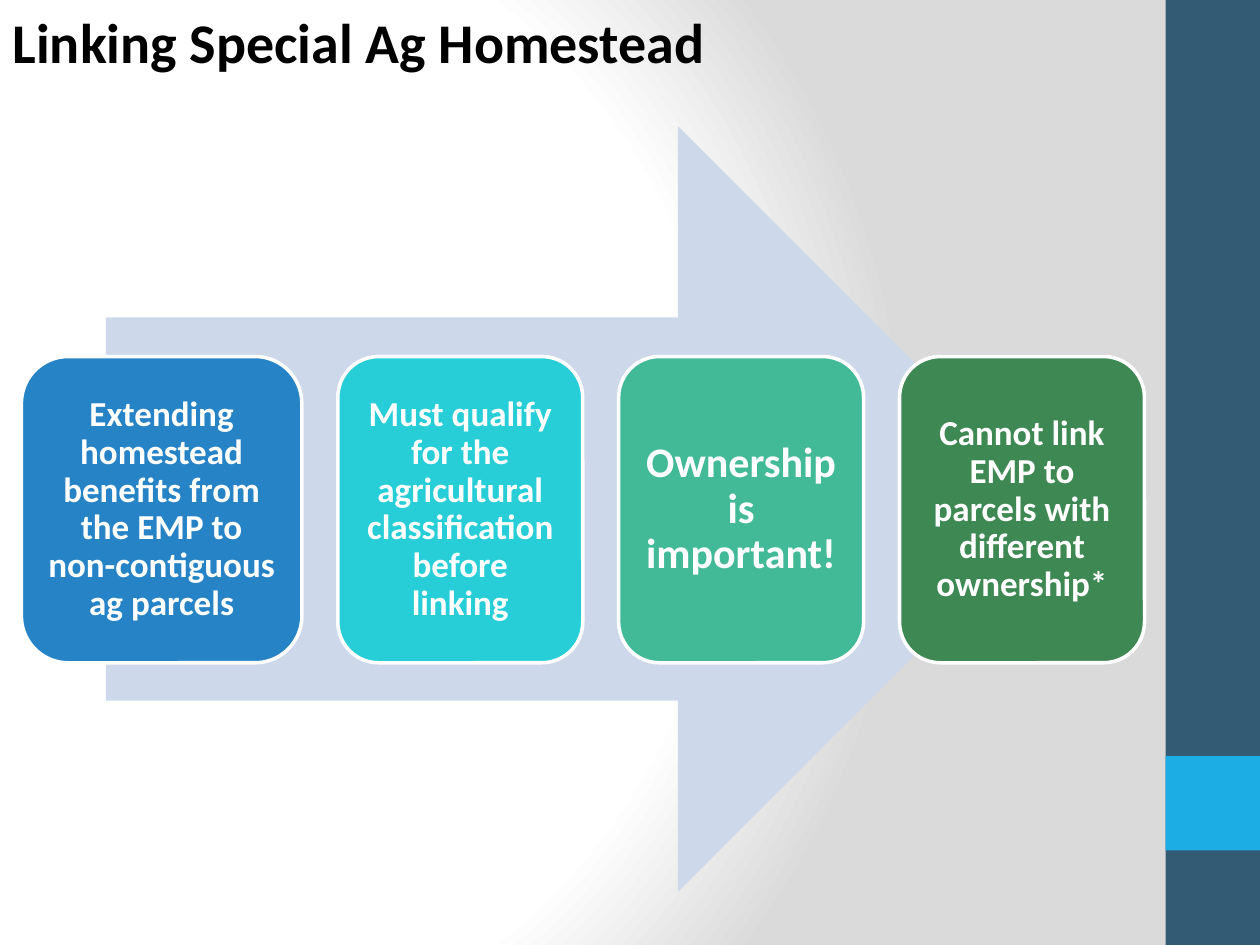
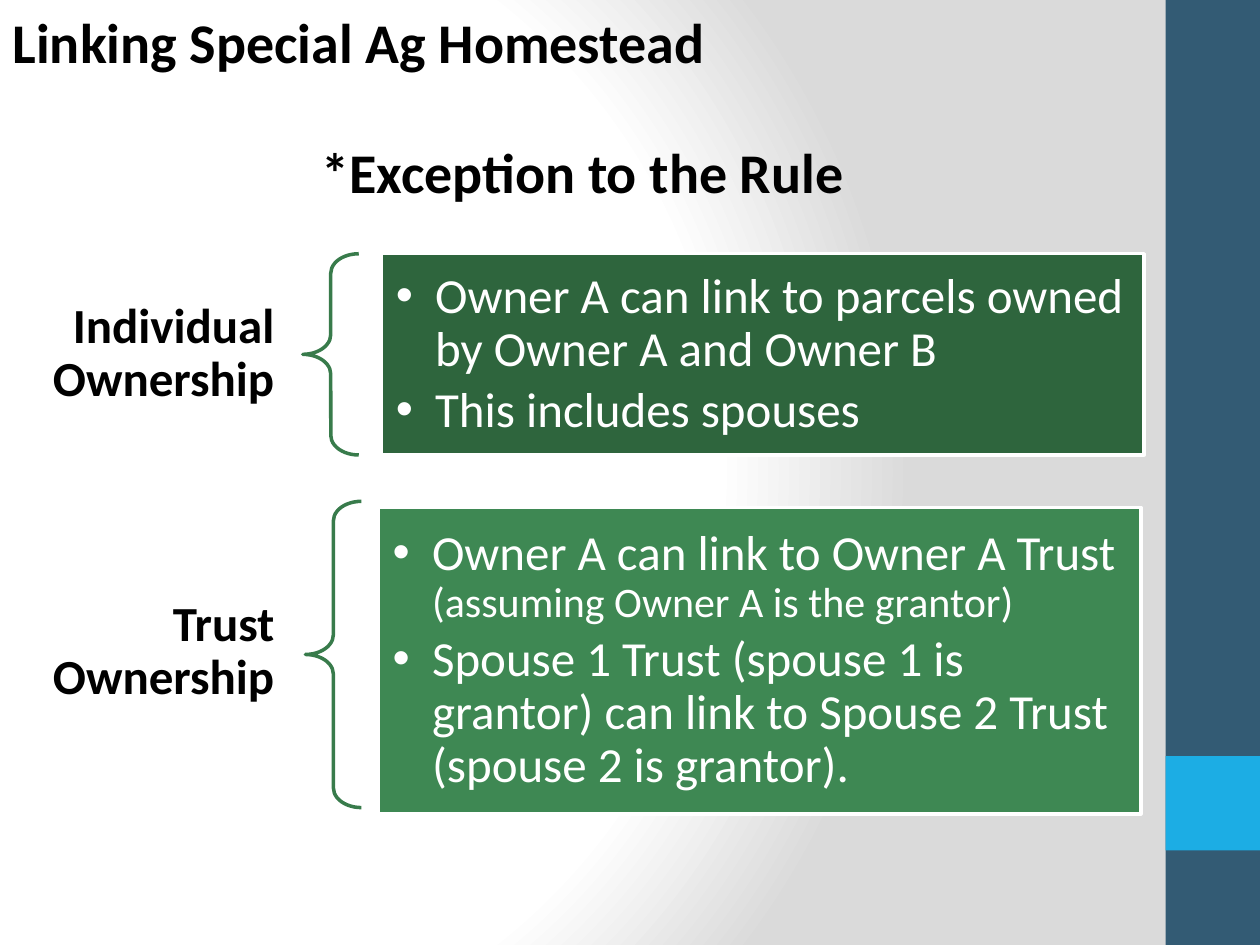
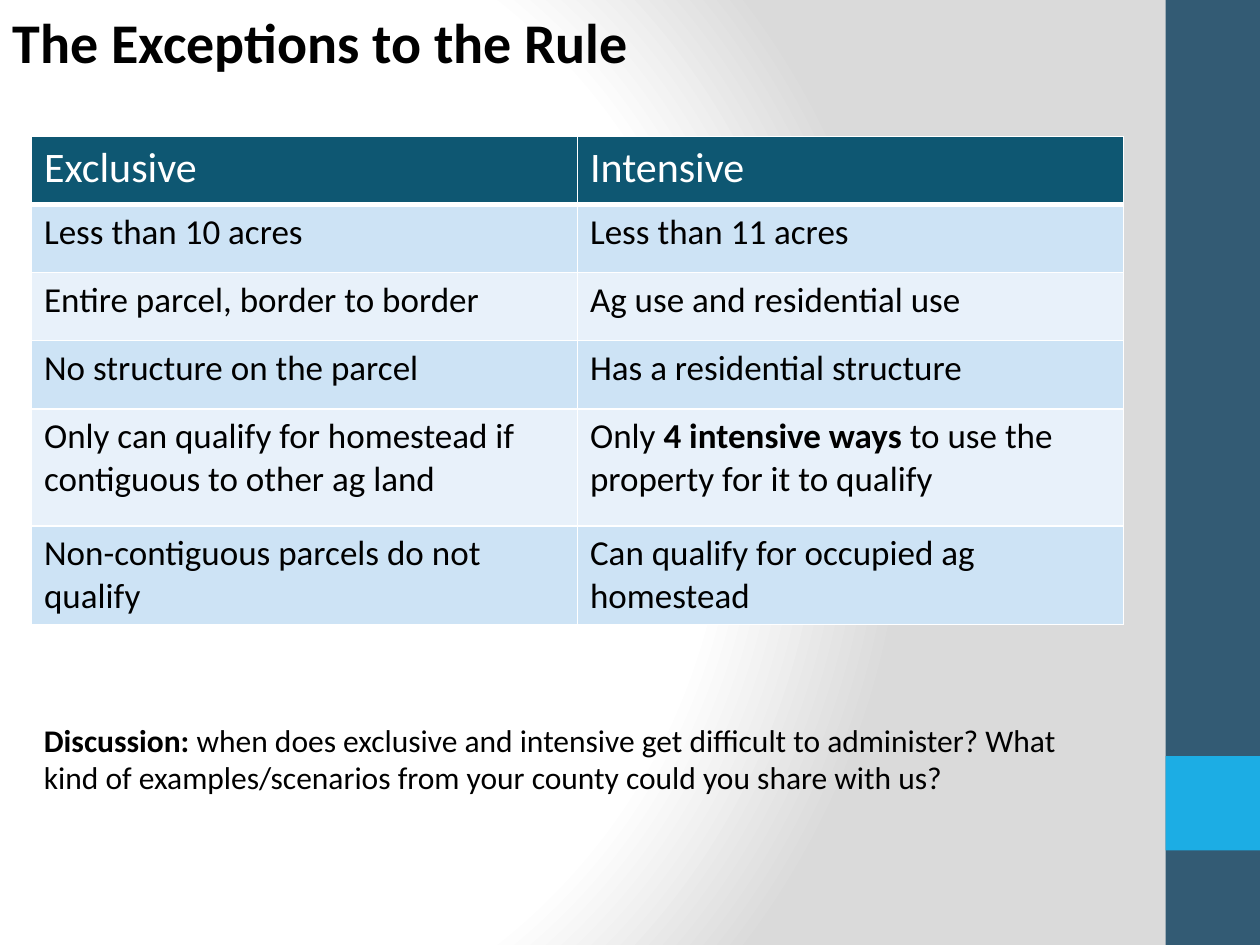
from dataclasses import dataclass
from typing import Any, NamedTuple

from pptx import Presentation
from pptx.dml.color import RGBColor
from pptx.enum.shapes import MSO_SHAPE
from pptx.enum.text import MSO_ANCHOR, MSO_AUTO_SIZE, PP_ALIGN
from pptx.oxml import parse_xml
from pptx.oxml.ns import nsdecls, qn
from pptx.util import Pt

RECT = MSO_SHAPE.RECTANGLE
ROUNDED = MSO_SHAPE.ROUNDED_RECTANGLE
ARROW = MSO_SHAPE.RIGHT_ARROW
BRACE = MSO_SHAPE.LEFT_BRACE
TOP = MSO_ANCHOR.TOP
MIDDLE = MSO_ANCHOR.MIDDLE
FIXED = MSO_AUTO_SIZE.NONE
LEFT = PP_ALIGN.LEFT
CENTER = PP_ALIGN.CENTER
RIGHT = PP_ALIGN.RIGHT
TWO_CONTENT = 3
TITLE_ONLY = 5


@dataclass(frozen=True)
class Theme:
    font: str = "Calibri"
    white: str = "FFFFFF"
    black: str = "000000"
    backdrop: str = "DADADA"
    side_band: str = "335B74"
    side_accent: str = "1CADE4"
    arrow: str = "CDD9EA"
    blue: str = "2683C6"
    cyan: str = "27CED7"
    teal: str = "42BA97"
    green: str = "3E8853"
    dark_green: str = "2E653D"
    brace: str = "387B4B"
    header: str = "0E5772"
    odd_row: str = "CDE3F5"
    even_row: str = "E8F1FA"
    title: int = 32
    list: int = 28
    large: int = 24
    normal: int = 20
    note: int = 18


THEME = Theme()


class Box(NamedTuple):
    left: float
    top: float
    width: float
    height: float

    def lengths(self) -> dict[str, int]:
        return {side: Pt(value) for side, value in self._asdict().items()}


class Span(NamedTuple):
    text: str
    size: int
    color: str = THEME.black
    bold: bool = False


class Band(NamedTuple):
    box: Box
    color: str


class Card(NamedTuple):
    text: str
    width: float
    color: str
    size: int = THEME.normal
    inset: float = 6


class Ownership(NamedTuple):
    label: str
    label_top: float
    brace: Box
    panel: Box
    color: str
    points: list[list[Span]]


TITLE_BOX = Box(0, 0.75, 551.5, 46)
BANDS = [
    Band(Box(666, 0, 54, 540), THEME.side_band),
    Band(Box(666, 432, 54, 54), THEME.side_accent),
]

ARROW_BOX = Box(60.5, 72, 545.75, 437.75)
CARD_LEFT, CARD_TOP, CARD_HEIGHT, CARD_GAP = 12.25, 203.75, 175, 20.5
CARDS = [
    Card("Extending homestead benefits from the EMP to non-contiguous ag parcels",
         160.25, THEME.blue),
    Card("Must qualify for the agricultural classification before linking",
         140, THEME.cyan),
    Card("Ownership is important!", 140, THEME.teal, THEME.large, 7.2),
    Card("Cannot link EMP to parcels with different ownership*", 140, THEME.green),
]


def point(text: str, size: int = THEME.list) -> Span:
    return Span(text, size, THEME.white)


OWNERSHIPS = [
    Ownership(
        "Individual Ownership", 165.5, Box(173, 145, 32, 115),
        Box(217.75, 145, 436, 115), THEME.dark_green,
        [[point("Owner A can link to parcels owned by Owner A and Owner B")],
         [point("This includes spouses")]]),
    Ownership(
        "Trust Ownership", 336, Box(174.5, 286.5, 32, 175),
        Box(216, 290, 436, 175), THEME.green,
        [[point("Owner A can link to Owner A Trust "),
          point("(assuming Owner A is the grantor)", THEME.large)],
         [point("Spouse 1 Trust (spouse 1 is grantor) can link to "
                "Spouse 2 Trust (spouse 2 is grantor).")]]),
]

TABLE_BOX = Box(18, 78, 624, 277)
ROW_HEIGHTS = [38.9, 38.9, 38.9, 38.9, 67, 38.9]
COMPARISON = [
    (["Exclusive"], ["Intensive"]),
    (["Less than 10 acres"], ["Less than 11 acres"]),
    (["Entire parcel, border to border"], ["Ag use and residential use"]),
    (["No structure on the parcel"], ["Has a residential structure"]),
    (["Only can qualify for homestead if contiguous to other ag land"],
     ["Only ", "4 intensive ways ", "to use the property for it to qualify"]),
    (["Non-contiguous parcels do not qualify"],
     ["Can qualify for occupied ag homestead"]),
]


def apply(target: Any, values: dict[str, Any]) -> None:
    for name, value in values.items():
        setattr(target, name, value)


def write(frame: Any, paragraphs: list[list[Span]], **layout: Any) -> None:
    for index, spans in enumerate(paragraphs):
        paragraph = frame.paragraphs[0] if index == 0 else frame.add_paragraph()
        apply(paragraph, layout)
        for span in spans:
            run = paragraph.add_run()
            run.text = span.text
            apply(run.font, {"name": THEME.font, "size": Pt(span.size),
                             "bold": span.bold})
            run.font.color.rgb = RGBColor.from_string(span.color)


def frame_format(anchor: Any, across: float = 7.2, down: float = 3.6) -> dict[str, Any]:
    return {"word_wrap": True, "auto_size": FIXED, "vertical_anchor": anchor,
            "margin_left": Pt(across), "margin_right": Pt(across),
            "margin_top": Pt(down), "margin_bottom": Pt(down)}


def paint(shape: Any, fill: str | None, line: str | None) -> None:
    if fill:
        shape.fill.solid()
        shape.fill.fore_color.rgb = RGBColor.from_string(fill)
    else:
        shape.fill.background()
    if line:
        shape.line.color.rgb = RGBColor.from_string(line)
        shape.line.width = Pt(2)
    else:
        shape.line.fill.background()


def draw(slide: Any, kind: Any, box: Box, fill: str | None = None,
         line: str | None = None) -> Any:
    shape = slide.shapes.add_shape(kind, *box.lengths().values())
    shape.shadow.inherit = False
    paint(shape, fill, line)
    return shape


def add_text(slide: Any, box: Box, spans: list[Span], frame: dict[str, Any],
             **layout: Any) -> None:
    words = slide.shapes.add_textbox(*box.lengths().values()).text_frame
    apply(words, frame)
    write(words, [spans], **layout)


def add_slide(deck: Any, layout: int, title: str) -> Any:
    slide = deck.slides.add_slide(deck.slide_layouts[layout])
    heading = slide.shapes.title
    apply(heading, TITLE_BOX.lengths())
    apply(heading.text_frame, frame_format(TOP))
    write(heading.text_frame, [[Span(title, THEME.title, bold=True)]], alignment=LEFT)
    return slide


def dress_master(deck: Any, slide: Any) -> None:
    master = deck.slide_master
    master.background.fill.solid()
    backdrop = master.element.find(f".//{qn('p:bgPr')}")
    stops = "".join(
        f'<a:gs pos="{share * 1000}"><a:srgbClr val="{color}"/></a:gs>'
        for share, color in [(0, THEME.white), (75, THEME.white), (100, THEME.backdrop)])
    backdrop.replace(backdrop[0], parse_xml(
        f'<a:gradFill {nsdecls("a")} rotWithShape="1"><a:gsLst>{stops}</a:gsLst>'
        '<a:path path="circle"><a:fillToRect l="20000" t="50000" r="100000" b="50000"/>'
        '</a:path></a:gradFill>'))
    for index, band in enumerate(BANDS):
        strip = draw(slide, RECT, band.box, band.color).element
        strip.nvSpPr.cNvPr.set("id", str(20 + index))
        master.shapes.element.insert(2 + index, strip)


def fill_cards(slide: Any) -> None:
    draw(slide, ARROW, ARROW_BOX, THEME.arrow)
    left = CARD_LEFT
    for card in CARDS:
        tile = draw(slide, ROUNDED, Box(left, CARD_TOP, card.width, CARD_HEIGHT),
                    card.color, THEME.white)
        apply(tile.text_frame, frame_format(MIDDLE, card.inset, card.inset))
        write(tile.text_frame, [[Span(card.text, card.size, THEME.white, True)]],
              alignment=CENTER, line_spacing=0.9)
        left += card.width + CARD_GAP


def fill_ownerships(slide: Any) -> None:
    add_text(slide, Box(0, 75, 666, 46),
             [Span("*Exception to the Rule", THEME.title, bold=True)],
             frame_format(TOP), alignment=CENTER)
    panels = list(slide.placeholders)[1:]
    for owner, panel in zip(OWNERSHIPS, panels):
        add_text(slide, Box(12.25, owner.label_top, 160.5, 73.5),
                 [Span(owner.label, THEME.list, bold=True)],
                 frame_format(MIDDLE, 16, 6), alignment=RIGHT, line_spacing=0.9)
        brace = draw(slide, BRACE, owner.brace, line=THEME.brace)
        brace.adjustments[0] = 0.35
        apply(panel, owner.panel.lengths())
        paint(panel, owner.color, THEME.white)
        apply(panel.text_frame, frame_format(MIDDLE, 8.4, 8.4))
        write(panel.text_frame, owner.points, line_spacing=0.9,
              space_before=Pt(0), space_after=Pt(4.5))
        for paragraph in panel.text_frame.paragraphs:
            indents = paragraph._p.get_or_add_pPr()
            indents.set("marL", str(Pt(22.5)))
            indents.set("indent", str(Pt(-22.5)))


def add_borders(cell: Any, bottom: float) -> None:
    properties = cell._tc.get_or_add_tcPr()
    for side, width in {"L": 1, "R": 1, "T": 1, "B": bottom}.items():
        properties.append(parse_xml(
            f'<a:ln{side} {nsdecls("a")} w="{Pt(width)}"><a:solidFill>'
            f'<a:srgbClr val="{THEME.white}"/></a:solidFill></a:ln{side}>'))


def fill_comparison(slide: Any) -> None:
    table = slide.shapes.add_table(
        len(COMPARISON), 2, *TABLE_BOX.lengths().values()).table
    apply(table, {"first_row": False, "horz_banding": False})
    for row, height in zip(table.rows, ROW_HEIGHTS):
        row.height = Pt(height)
    for index, texts in enumerate(COMPARISON):
        header = index == 0
        size = THEME.large if header else THEME.normal
        ink = THEME.white if header else THEME.black
        shade = THEME.header if header else (THEME.even_row, THEME.odd_row)[index % 2]
        for column, pieces in enumerate(texts):
            cell = table.cell(index, column)
            add_borders(cell, 3 if header else 1)
            cell.fill.solid()
            cell.fill.fore_color.rgb = RGBColor.from_string(shade)
            write(cell.text_frame, [[Span(piece, size, ink, place == 1)
                                     for place, piece in enumerate(pieces)]])
    add_text(slide, Box(18, 408.25, 624, 51),
             [Span("Discussion: ", THEME.note, bold=True),
              Span("when does exclusive and intensive get difficult to administer? "
                   "What kind of examples/scenarios from your county could you "
                   "share with us?", THEME.note)],
             frame_format(TOP))


def main() -> None:
    deck = Presentation()
    apply(deck, {"slide_width": Pt(720), "slide_height": Pt(540)})
    linking = add_slide(deck, TITLE_ONLY, "Linking Special Ag Homestead")
    dress_master(deck, linking)
    fill_cards(linking)
    fill_ownerships(add_slide(deck, TWO_CONTENT, "Linking Special Ag Homestead"))
    fill_comparison(add_slide(deck, TITLE_ONLY, "The Exceptions to the Rule"))
    deck.save("out.pptx")


if __name__ == "__main__":
    main()
